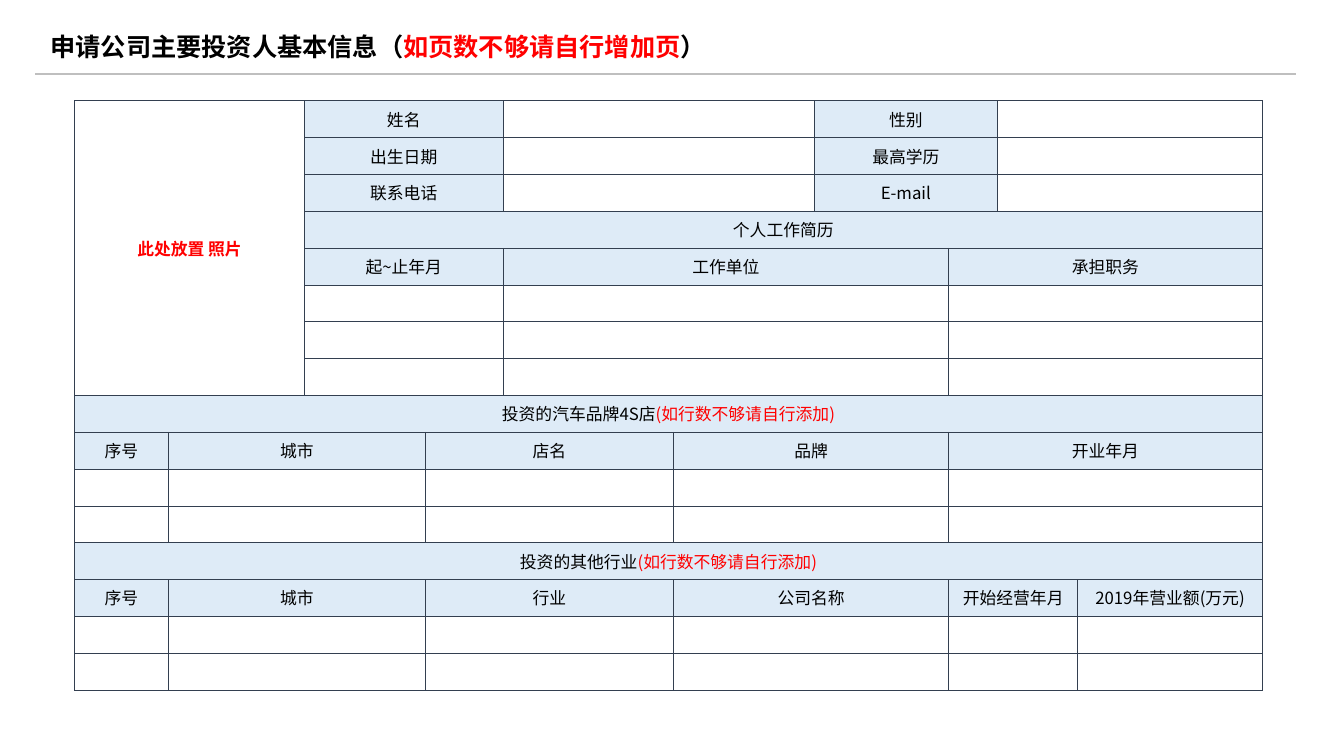
from lxml.etree import SubElement
from pptx import Presentation
from pptx.dml.color import RGBColor
from pptx.enum.shapes import MSO_CONNECTOR
from pptx.enum.text import MSO_ANCHOR, MSO_AUTO_SIZE, PP_ALIGN
from pptx.oxml.ns import qn
from pptx.util import Pt

PX = 9144  # 100 px to the inch
FONT = "Noto Sans CJK SC"
BLACK = RGBColor(0x00, 0x00, 0x00)
RED = RGBColor(0xFF, 0x00, 0x00)
WHITE = RGBColor(0xFF, 0xFF, 0xFF)
PALE_BLUE = RGBColor(0xDE, 0xEB, 0xF7)
NAVY = RGBColor(0x33, 0x3F, 0x50)
GREY = RGBColor(0xBF, 0xBF, 0xBF)

TABLE_LEFT, TABLE_TOP, TABLE_HEIGHT = 74, 100, 585
COLUMN_WIDTHS = [93, 135, 120, 77, 169, 140, 133, 48, 80, 183]
PHOTO_ROWS, PHOTO_COLUMNS = 8, 2
PHOTO_TEXT = "此处放置 照片"
ADD_ROWS_NOTE = "(如行数不够请自行添加)"

# Column spans of each kind of row
PERSON = (2, 2, 2, 2)
CAREER = (2, 3, 3)
STORES = (1, 2, 2, 2, 3)
BUSINESSES = (1, 2, 2, 2, 2, 1)

# Each row: spans and labels; a label is text or (text, red note)
ROWS = [
    (PERSON, ["姓名", "", "性别", ""]),
    (PERSON, ["出生日期", "", "最高学历", ""]),
    (PERSON, ["联系电话", "", "E-mail", ""]),
    ((8,), ["个人工作简历"]),
    (CAREER, ["起~止年月", "工作单位", "承担职务"]),
    *[(CAREER, [""] * len(CAREER))] * 3,
    ((10,), [("投资的汽车品牌4S店", ADD_ROWS_NOTE)]),
    (STORES, ["序号", "城市", "店名", "品牌", "开业年月"]),
    *[(STORES, [""] * len(STORES))] * 2,
    ((10,), [("投资的其他行业", ADD_ROWS_NOTE)]),
    (BUSINESSES, ["序号", "城市", "行业", "公司名称", "开始经营年月", "2019年营业额(万元)"]),
    *[(BUSINESSES, [""] * len(BUSINESSES))] * 2,
]


def write_paragraph(paragraph, parts, size, bold=False):
    """Fill a centred paragraph with (text, colour) parts."""
    paragraph.alignment = PP_ALIGN.CENTER
    paragraph.line_spacing = Pt(17)
    font = paragraph.font
    font.size, font.bold, font.name = Pt(size), bold, FONT
    for text, colour in parts:
        run = paragraph.add_run()
        run.text = text
        run.font.color.rgb = colour
        # Chinese text takes its typeface from a:ea
        run.font.name = FONT
        SubElement(run.font._element, qn("a:ea"), typeface=FONT)


def add_title(slide):
    title = slide.shapes.title
    title.left, title.top, title.width, title.height = (
        value * PX for value in (40, 32, 670, 34))
    frame = title.text_frame
    # The line needs nearly the full width of the box
    frame.margin_left = frame.margin_right = 0
    frame.word_wrap = False
    frame.auto_size = MSO_AUTO_SIZE.SHAPE_TO_FIT_TEXT
    frame.vertical_anchor = MSO_ANCHOR.TOP
    parts = [("申请公司主要投资人基本信息（", BLACK),
             ("如页数不够请自行增加页", RED), ("）", BLACK)]
    write_paragraph(frame.paragraphs[0], parts, 18, bold=True)


def add_divider(slide):
    divider = slide.shapes.add_connector(
        MSO_CONNECTOR.STRAIGHT, 35 * PX, 73 * PX, 1285 * PX, 73 * PX)
    divider.line.color.rgb = GREY
    divider.line.width = Pt(1.5)
    SubElement(divider._element.spPr, qn("a:effectLst"))


def add_borders(cell):
    properties = cell._tc.get_or_add_tcPr()
    for side in ("lnL", "lnR", "lnT", "lnB"):
        border = SubElement(properties, qn(f"a:{side}"), w=str(Pt(0.5)))
        fill = SubElement(border, qn("a:solidFill"))
        SubElement(fill, qn("a:srgbClr"), val=str(NAVY))


def fill_cell(cell, parts, fill, bold=False):
    cell.fill.solid()
    cell.fill.fore_color.rgb = fill
    write_paragraph(cell.text_frame.paragraphs[0], parts, 12, bold)


def label_parts(label):
    if not label:
        return []
    if isinstance(label, tuple):
        return list(zip(label, (BLACK, RED)))
    return [(label, BLACK)]


def add_form(slide):
    frame = slide.shapes.add_table(
        len(ROWS), len(COLUMN_WIDTHS), TABLE_LEFT * PX, TABLE_TOP * PX,
        sum(COLUMN_WIDTHS) * PX, TABLE_HEIGHT * PX)
    table = frame.table
    table.first_row = table.horz_banding = False
    for column, width in zip(table.columns, COLUMN_WIDTHS):
        column.width = width * PX
    for row in table.rows:
        row.height = TABLE_HEIGHT * PX // len(ROWS)

    # Borders and insets, also under merged cells
    for cell in table.iter_cells():
        cell.margin_left = cell.margin_right = 2 * PX
        cell.margin_top = cell.margin_bottom = 0
        cell.vertical_anchor = MSO_ANCHOR.MIDDLE
        add_borders(cell)

    # Photo area
    photo = table.cell(0, 0)
    photo.merge(table.cell(PHOTO_ROWS - 1, PHOTO_COLUMNS - 1))
    fill_cell(photo, [(PHOTO_TEXT, RED)], WHITE, bold=True)

    # Labels and blank fields
    for row_index, (spans, labels) in enumerate(ROWS):
        column_index = PHOTO_COLUMNS if row_index < PHOTO_ROWS else 0
        for span, label in zip(spans, labels):
            cell = table.cell(row_index, column_index)
            if span > 1:
                cell.merge(table.cell(row_index, column_index + span - 1))
            fill_cell(cell, label_parts(label), PALE_BLUE if label else WHITE)
            column_index += span


def main():
    presentation = Presentation()
    presentation.slide_width, presentation.slide_height = 1333 * PX, 750 * PX
    slide = presentation.slides.add_slide(presentation.slide_layouts[5])
    add_divider(slide)
    add_form(slide)
    add_title(slide)
    presentation.save("out.pptx")


if __name__ == "__main__":
    main()
